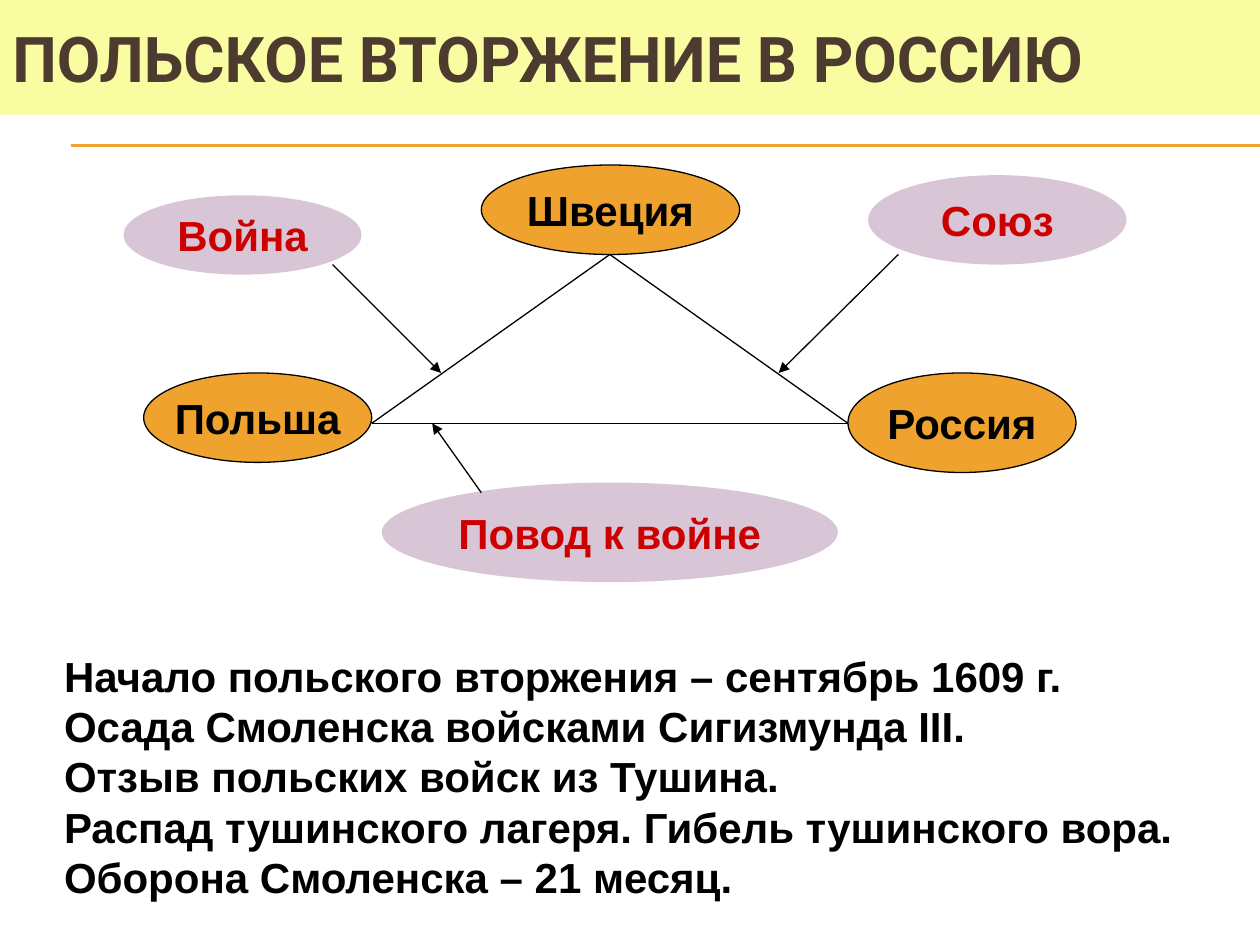
from pptx import Presentation
from pptx.dml.color import RGBColor
from pptx.enum.shapes import MSO_CONNECTOR as Connector, MSO_SHAPE as Shape
from pptx.enum.text import MSO_ANCHOR as Anchor, PP_ALIGN as Align
from pptx.oxml.ns import qn
from pptx.util import Inches, Pt
from lxml.etree import SubElement

BLACK, RED, ORANGE, LILAC = "000000", "CC0000", "F0A22E", "D8C6D7"
COUNTRIES = [
    ("Швеция", 3.82, 1.31, 2.05, 0.71),
    ("Россия", 6.73, 2.96, 1.81, 0.79),
    ("Польша", 1.14, 2.96, 1.81, 0.71),
]
RELATIONS = [
    ("Союз", (6.89, 1.39, 2.05, 0.71), (7.13, 2.02), (6.18, 2.96)),
    ("Война", (0.98, 1.55, 1.89, 0.63), (2.64, 2.1), (3.5, 2.96)),
    ("Повод к войне", (3.03, 3.83, 3.62, 0.79), (3.82, 3.91), (3.43, 3.36)),
]
TRIANGLE = [(4.84, 2.02), (6.73, 3.36), (2.95, 3.36)]
EVENTS = [
    ["Начало польского вторжения – сентябрь 1609 г.",
     "Осада Смоленска войсками Сигизмунда III."],
    ["Отзыв польских войск из Тушина.",
     "Распад тушинского лагеря. Гибель тушинского вора."],
    ["Оборона Смоленска – 21 месяц."],
]


def color(value):
    return RGBColor.from_string(value)


def write(paragraph, lines, size=24, font="Arial", fill=BLACK, align=Align.LEFT):
    paragraph.alignment = align
    for index, line in enumerate(lines):
        if index:
            paragraph.add_line_break()
        run = paragraph.add_run()
        run.text = line
        run.font.size = Pt(size)
        run.font.name = font
        run.font.bold = True
        run.font.color.rgb = color(fill)


def add_filled(slide, kind, box, fill, line=None, wrap=False):
    shape = slide.shapes.add_shape(kind, *map(Inches, box))
    shape.shadow.inherit = False
    shape.fill.solid()
    shape.fill.fore_color.rgb = color(fill)
    if line:
        shape.line.color.rgb = color(line)
        shape.line.width = Pt(0.75)
    else:
        shape.line.fill.background()
    shape.text_frame.word_wrap = wrap
    shape.text_frame.vertical_anchor = Anchor.MIDDLE
    return shape.text_frame.paragraphs[0]


def add_line(slide, start, end, stroke=BLACK, arrow=False):
    connector = slide.shapes.add_connector(
        Connector.STRAIGHT, *map(Inches, (*start, *end)))
    connector.line.color.rgb = color(stroke)
    connector.line.width = Pt(0.75)
    if arrow:
        SubElement(connector.line._get_or_add_ln(), qn("a:tailEnd"), type="triangle")
    SubElement(connector._element.spPr, qn("a:effectLst"))


def add_title(slide, box):
    paragraph = add_filled(slide, Shape.RECTANGLE, box, "FAFCA2", wrap=True)
    write(paragraph, ["ПОЛЬСКОЕ ВТОРЖЕНИЕ В РОССИЮ"], size=36, font="Roboto", fill="4E3B30")


def add_rule(slide, left, top, width):
    for y in (top, top + 0.01):
        add_line(slide, (left, y), (left + width, y), ORANGE)


def add_diagram(slide, left, top):
    def place(x, y, *size):
        return (left + x, top + y, *size)

    for name, *box in COUNTRIES:
        paragraph = add_filled(slide, Shape.OVAL, place(*box), ORANGE, BLACK)
        write(paragraph, [name], align=Align.CENTER)
    for name, box, start, end in RELATIONS:
        paragraph = add_filled(slide, Shape.OVAL, place(*box), LILAC)
        write(paragraph, [name], fill=RED, align=Align.CENTER)
        add_line(slide, place(*start), place(*end), arrow=True)
    for start, end in zip(TRIANGLE, TRIANGLE[1:] + TRIANGLE[:1]):
        add_line(slide, place(*start), place(*end))


def add_events(slide, box):
    text_frame = slide.shapes.add_textbox(*map(Inches, box)).text_frame
    text_frame.word_wrap = False
    for index, lines in enumerate(EVENTS):
        paragraph = text_frame.add_paragraph() if index else text_frame.paragraphs[0]
        write(paragraph, lines)


def main():
    presentation = Presentation()
    presentation.slide_width = Inches(10)
    presentation.slide_height = Inches(7.5)
    slide = presentation.slides.add_slide(presentation.slide_layouts[6])
    add_rule(slide, 0.56, 1.15, 9.44)
    add_title(slide, (0, 0, 10, 0.91))
    add_diagram(slide, 0, 0)
    add_events(slide, (0.41, 5.11, 9.02, 2.1))
    presentation.save("out.pptx")


if __name__ == "__main__":
    main()
